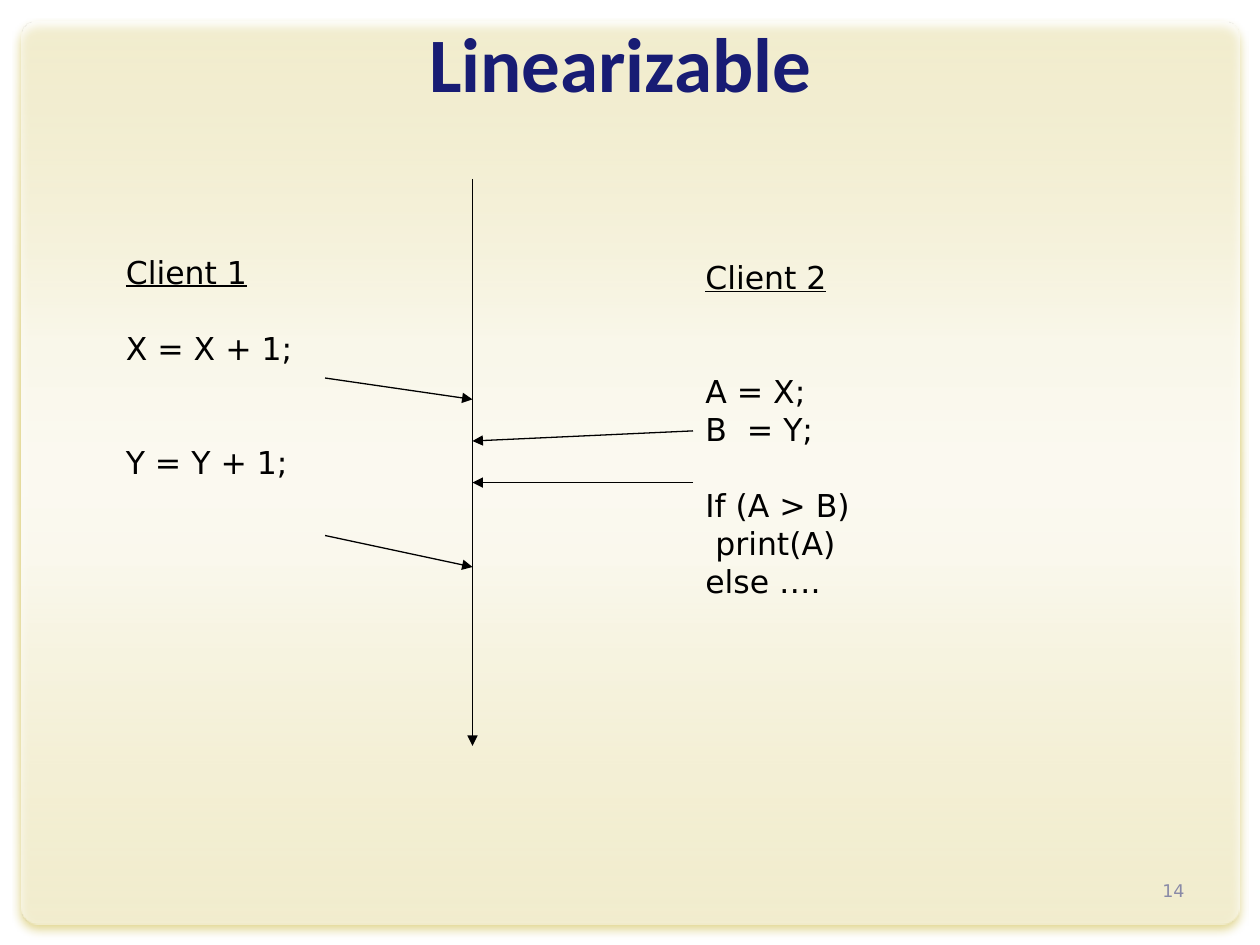
from lxml import etree
from pptx import Presentation
from pptx.dml.color import RGBColor
from pptx.enum.shapes import MSO_CONNECTOR, MSO_SHAPE
from pptx.enum.text import MSO_ANCHOR, MSO_AUTO_SIZE, PP_ALIGN
from pptx.oxml import parse_xml
from pptx.oxml.ns import nsdecls, qn
from pptx.util import Inches, Pt

# Content: (text, empty lines above) for each client
CLIENTS = [
    ((0.9, 1.96, 1.65, 2.9),
     [("Client 1", 0), ("X = X + 1;", 1), ("Y = Y + 1;", 2)]),
    ((5.5, 2, 1.63, 4.09),
     [("Client 2", 0), ("A = X;", 2), ("B  = Y;", 0),
      ("If (A > B)", 1), (" print(A)", 0), ("else ….", 0)]),
]
AXIS, LEFT, RIGHT = 3.75, 2.58, 5.5
# Operations: start x, start y, y on the time axis
OPERATIONS = [(LEFT, 3, 3.17), (RIGHT, 3.42, 3.5),
              (RIGHT, 3.83, 3.83), (LEFT, 4.25, 4.5)]
PANEL_STOPS = [(0, 50), (35, 87), (50, 92), (60, 89), (100, 55)]  # position, alpha
LINE_PITCH = 21.7

BODY = dict(name="DejaVu Sans", size=Pt(18))
TITLE = dict(name="Calibri", size=Pt(44), bold=True)
NUMBER = dict(name="DejaVu Sans", size=Pt(10))


def rgb(value):
    return RGBColor.from_string(value)


def box(*lengths):
    return [Inches(v) for v in lengths]


def write(p, text, style, color, **extra):
    r = p.add_run()
    r.text = text
    for key, value in {**style, **extra}.items():
        setattr(r.font, key, value)
    r.font.color.rgb = rgb(color)


def arrow(slide, x1, y1, x2, y2):
    line = slide.shapes.add_connector(MSO_CONNECTOR.STRAIGHT, *box(x1, y1, x2, y2))
    line.line.color.rgb = rgb("000000")
    line.line.width = Pt(0.75)
    etree.SubElement(line.line._get_or_add_ln(), qn("a:tailEnd"), type="triangle")
    etree.SubElement(line._element.spPr, qn("a:effectLst"))


def panel(slide):
    s = slide.shapes.add_shape(MSO_SHAPE.ROUNDED_RECTANGLE, *box(0.17, 0.17, 9.67, 7.17))
    s.adjustments[0] = 0.02
    s.line.fill.background()
    stops = "".join(
        f'<a:gs pos="{pos * 1000}"><a:srgbClr val="FFFFFF">'
        f'<a:alpha val="{alpha * 1000}"/></a:srgbClr></a:gs>'
        for pos, alpha in PANEL_STOPS)
    pr = s._element.spPr
    pr.find(qn("a:prstGeom")).addnext(parse_xml(
        f'<a:gradFill {nsdecls("a")} rotWithShape="1"><a:gsLst>{stops}</a:gsLst>'
        '<a:lin ang="5400000" scaled="0"/></a:gradFill>'))
    pr.append(parse_xml(
        f'<a:effectLst {nsdecls("a")}><a:outerShdw blurRad="{Pt(5)}" dist="{Pt(3.6)}" '
        'dir="5400000" rotWithShape="0"><a:srgbClr val="C5AF25">'
        '<a:alpha val="90000"/></a:srgbClr></a:outerShdw></a:effectLst>'))
    slide.shapes._spTree.insert(2, s._element)  # behind the title


def main():
    prs = Presentation()
    prs.slide_width, prs.slide_height = box(10, 7.5)
    slide = prs.slides.add_slide(prs.slide_layouts[5])
    panel(slide)

    # Title
    title = slide.shapes.title
    title.left, title.top, title.width, title.height = box(0.33, 0.25, 9.33, 1.17)
    tf = title.text_frame
    tf.vertical_anchor = MSO_ANCHOR.TOP
    tf.auto_size = MSO_AUTO_SIZE.NONE
    p = tf.paragraphs[0]
    p.alignment, p.line_spacing = PP_ALIGN.CENTER, Pt(40)
    write(p, "Linearizable ", TITLE, "181C74")

    # Slide number
    tf = slide.shapes.add_textbox(*box(7.17, 6.8, 2.33, 0.4)).text_frame
    tf.word_wrap, tf.vertical_anchor = True, MSO_ANCHOR.BOTTOM
    p = tf.paragraphs[0]
    p.alignment = PP_ALIGN.RIGHT
    write(p, "14", NUMBER, "898AA7")

    # Client programs, with an underlined heading each
    for place, lines in CLIENTS:
        tf = slide.shapes.add_textbox(*box(*place)).text_frame
        tf.word_wrap = False
        for i, (text, gap) in enumerate(lines):
            p = tf.add_paragraph() if i else tf.paragraphs[0]
            p.line_spacing, p.space_before = Pt(LINE_PITCH), Pt(gap * LINE_PITCH)
            write(p, text, BODY, "000000", underline=i == 0)

    # Time axis and the operations that land on it
    arrow(slide, AXIS, 1.42, AXIS, 5.92)
    for x, y, landing in OPERATIONS:
        arrow(slide, x, y, AXIS, landing)

    prs.save("out.pptx")


if __name__ == "__main__":
    main()
